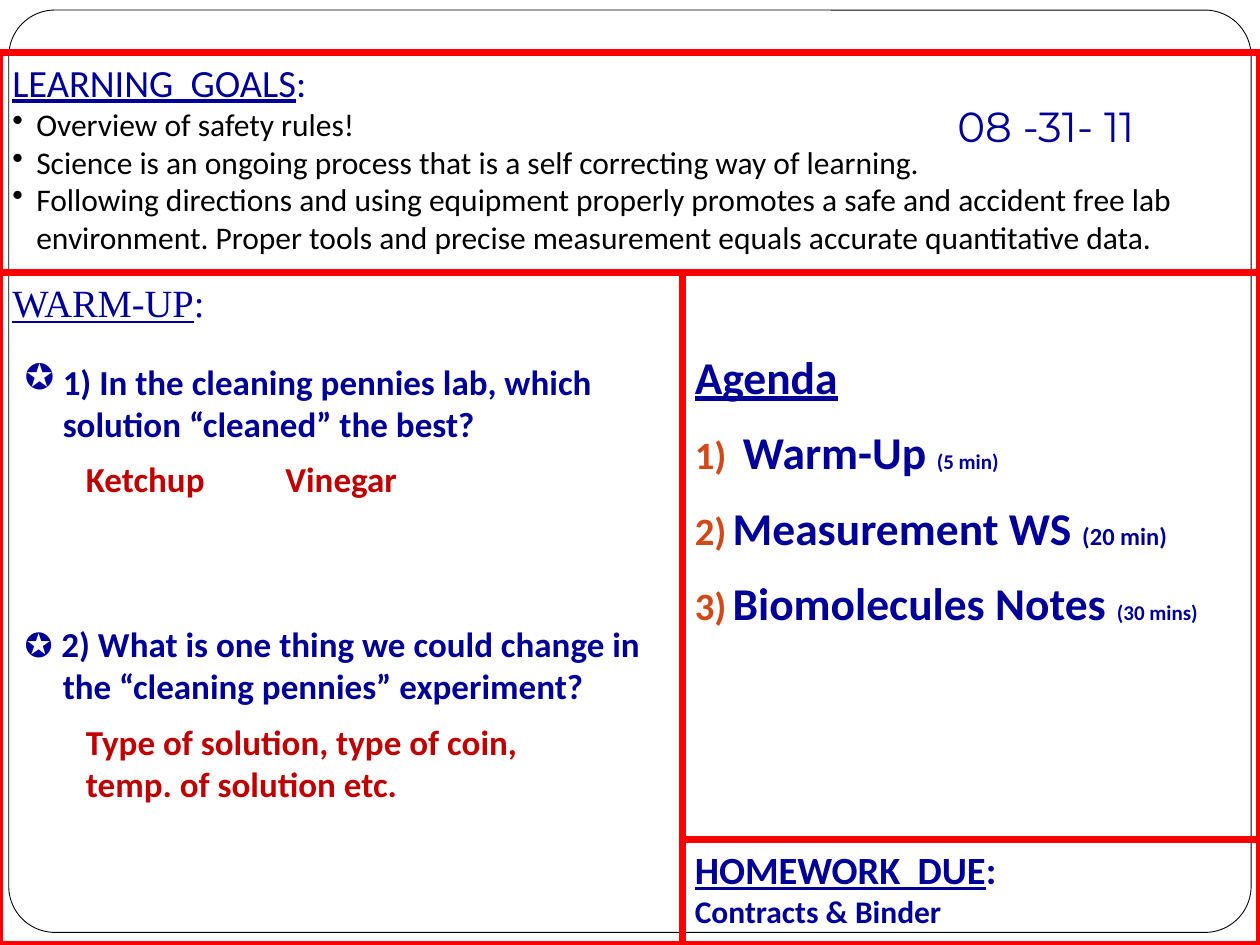
from lxml.etree import SubElement
from pptx import Presentation
from pptx.dml.color import RGBColor
from pptx.enum.shapes import MSO_SHAPE
from pptx.enum.text import MSO_ANCHOR, PP_ALIGN
from pptx.oxml.ns import qn
from pptx.util import Inches, Pt

BLACK = RGBColor(0x00, 0x00, 0x00)
WHITE = RGBColor(0xFF, 0xFF, 0xFF)
RED = RGBColor(0xFF, 0x00, 0x00)
NAVY = RGBColor(0x00, 0x00, 0x99)
CRIMSON = RGBColor(0xC0, 0x00, 0x00)
ORANGE = RGBColor(0xD3, 0x48, 0x17)

COLUMNS, ROWS = 120, 90  # square grid cells of 1/12 inch


class Board:
    """Class agenda board: its style and the current page."""

    font = "Calibri"

    def __init__(self):
        self.deck = Presentation()
        self.deck.slide_width, self.deck.slide_height = Inches(10), Inches(7.5)
        self.page = self.deck.slides.add_slide(self.deck.slide_layouts[6])

    def place(self, column, row, columns, rows):
        cell_width = self.deck.slide_width / COLUMNS
        cell_height = self.deck.slide_height / ROWS
        return (round(column * cell_width), round(row * cell_height),
                round(columns * cell_width), round(rows * cell_height))

    def frame(self, box, top=0.05):
        frame = box.text_frame
        frame.word_wrap = True
        frame.vertical_anchor = MSO_ANCHOR.TOP
        frame.margin_left = frame.margin_right = Inches(0.1)
        frame.margin_top, frame.margin_bottom = Inches(top), Inches(0.05)
        return frame

    def panel(self, *cells, kind=MSO_SHAPE.RECTANGLE, line=RED, width=4, top=0.05):
        box = self.page.shapes.add_shape(kind, *self.place(*cells))
        box.shadow.inherit = False
        box.fill.background()
        box.line.color.rgb, box.line.width = line, Pt(width)
        self.frame(box, top)
        return box

    def label(self, *cells, text, size=20, color=CRIMSON, bold=True, font=None):
        box = self.page.shapes.add_textbox(*self.place(*cells))
        para = self.para(self.frame(box), first=True)
        self.span(para, text, size, color, bold, font=font)

    def para(self, frame, first=False, before=0, left=0, hang=0,
             bullet=None, numbered=False):
        para = frame.paragraphs[0] if first else frame.add_paragraph()
        para.alignment = PP_ALIGN.LEFT
        para.space_before = Pt(before)
        properties = para._p.get_or_add_pPr()
        properties.set("marL", str(Inches(left)))
        properties.set("indent", str(-Inches(hang)))
        if numbered:
            color = SubElement(properties, qn("a:buClr"))
            SubElement(color, qn("a:srgbClr"), val=str(ORANGE))
            SubElement(properties, qn("a:buSzPct"), val="85000")
            SubElement(properties, qn("a:buAutoNum"), type="arabicParenR")
        elif bullet:
            SubElement(properties, qn("a:buChar"), char=bullet)
        else:
            SubElement(properties, qn("a:buNone"))
        return para

    def span(self, para, text, size, color=NAVY, bold=False, underline=False,
             font=None):
        span = para.add_run()
        span.text = text
        span.font.name = font or self.font
        span.font.size, span.font.color.rgb = Pt(size), color
        span.font.bold, span.font.underline = bold, underline

    def heading(self, frame, text, bold=False, font=None):
        para = self.para(frame, first=True, left=0.19, hang=0.19)
        self.span(para, text, 22, bold=bold, underline=True, font=font)
        self.span(para, ":", 22, bold=bold, font=font)


def main():
    board = Board()

    # Rounded page border
    border = board.panel(0.84, 0.96, 118.32, 87.84, line=BLACK, width=0.5,
                         kind=MSO_SHAPE.ROUNDED_RECTANGLE)
    border.adjustments[0] = 0.05
    border.fill.solid()
    border.fill.fore_color.rgb = WHITE

    # Warm-up questions, with room for answers
    warm_up = board.panel(0, 26, 65, 64).text_frame
    board.heading(warm_up, "WARM-UP", font="Times New Roman")
    para = board.para(warm_up, before=20, left=0.4, hang=0.3, bullet="✪")
    board.span(para, "1) In the cleaning pennies lab, which solution “cleaned” "
               "the best?", 20, bold=True)
    para = board.para(warm_up, before=102, left=0.4, hang=0.3)
    board.span(para, "✪ ", 20, font="Times New Roman")
    board.span(para, "2) What is one thing we could change in the “cleaning "
               "pennies” experiment?", 20, bold=True)

    # Agenda
    agenda = board.panel(65, 26, 55, 54, top=0.6).text_frame
    para = board.para(agenda, first=True, left=0.3, hang=0.3)
    board.span(para, "Agenda", 26, bold=True, underline=True)
    for task, duration, size in ((" Warm-Up ", "(5 min)", 12),
                                 ("Measurement WS ", "(20 min)", 14),
                                 ("Biomolecules Notes ", "(30 mins)", 12)):
        para = board.para(agenda, before=12, left=0.3, hang=0.3, numbered=True)
        board.span(para, task, 26, bold=True)
        board.span(para, duration, size, bold=True)

    # Learning goals
    goals = board.panel(0, 5, 120, 21).text_frame
    board.heading(goals, "LEARNING  GOALS")
    for goal in (
        "Overview of safety rules!",
        "Science is an ongoing process that is a self correcting way of learning.",
        "Following directions and using equipment properly promotes a safe and "
        "accident free lab environment. Proper tools and precise measurement "
        "equals accurate quantitative data.",
    ):
        para = board.para(goals, left=0.19, hang=0.19, bullet="•")
        board.span(para, goal, 18, BLACK)

    # Homework
    homework = board.panel(65, 80, 55, 10).text_frame
    board.heading(homework, "HOMEWORK  DUE", bold=True)
    para = board.para(homework, left=0.19, hang=0.19)
    board.span(para, "Contracts & Binder", 18, bold=True)

    # Date and answers
    board.label(90, 9, 27, 6, text="08 -31- 11", size=24, color=NAVY,
                bold=False, font="Montserrat")
    board.label(7, 43, 16, 5.25, text="Ketchup")
    board.label(26, 43, 16, 5.25, text="Vinegar")
    board.label(7, 68, 45, 9.25,
                text="Type of solution, type of coin, temp. of solution etc.")

    board.deck.save("out.pptx")


if __name__ == "__main__":
    main()
